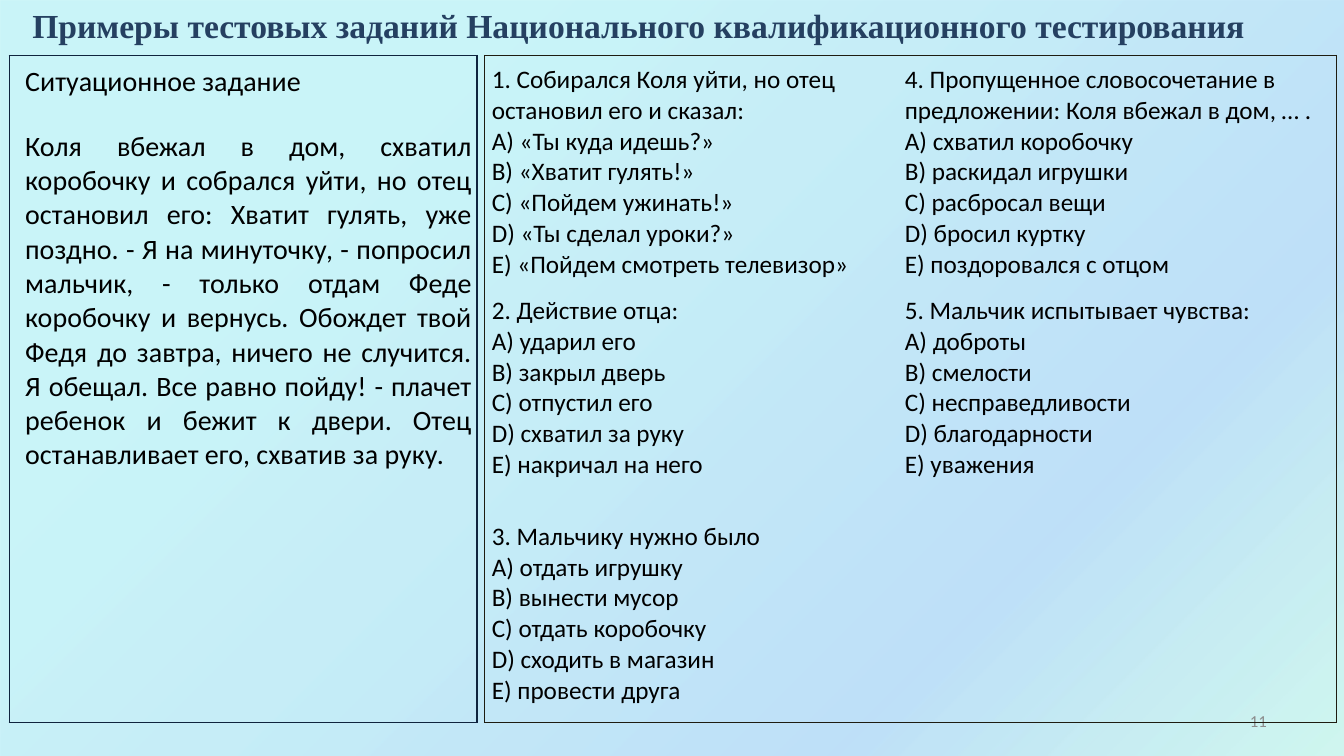
"""Build a slide with sample tasks of the national qualification test."""
from dataclasses import dataclass

from lxml.etree import SubElement
from pptx import Presentation
from pptx.dml.color import RGBColor
from pptx.enum.shapes import MSO_SHAPE
from pptx.enum.text import MSO_ANCHOR, MSO_AUTO_SIZE, PP_ALIGN
from pptx.oxml import parse_xml
from pptx.oxml.ns import nsdecls, qn
from pptx.util import Cm, Pt


@dataclass(frozen=True)
class Theme:
    """Colours, fonts and type sizes of the slide."""
    title_font: str = "Times New Roman"
    body_font: str = "Calibri"
    title_color: str = "254061"
    text_color: str = "000000"
    number_color: str = "8C8C8C"
    story_border: str = "0F243E"
    questions_border: str = "1E1C11"
    title_size: int = 24
    story_size: int = 20
    question_size: int = 18
    number_size: int = 12
    gradient: tuple = ((25, "21D6E0", 23), (75, "0087E6", 25),
                       (100, "03D4A8", 18), (100, "005CBF", 26))


theme = Theme()
NO_STYLE = "{2D5ABB26-0587-4C30-8999-92F81FD0307C}"


def add_run(paragraph, text, size, color=theme.text_color, font=theme.body_font, bold=False):
    """Append one formatted run to a paragraph."""
    run = paragraph.add_run()
    run.text = text
    run.font.size = Pt(size)
    run.font.name = font
    run.font.bold = bold
    run.font.color.rgb = RGBColor.from_string(color)


def add_plain_table(left, top, widths, heights):
    """Add a table without style, sized in centimetres, and return it."""
    frame = slide.shapes.add_table(len(heights), len(widths), Cm(left), Cm(top),
                                   Cm(sum(widths)), Cm(sum(heights)))
    table = frame.table
    table._tbl.tblPr.find(qn("a:tableStyleId")).text = NO_STYLE
    table.first_row = table.horz_banding = False
    for column, width in zip(table.columns, widths):
        column.width = Cm(width)
    for row, height in zip(table.rows, heights):
        row.height = Cm(height)
    for cell in table.iter_cells():
        cell.fill.background()
    return table


presentation = Presentation()
presentation.slide_width = Cm(33.87)
presentation.slide_height = Cm(19.05)
slide = presentation.slides.add_slide(presentation.slide_layouts[6])

backdrop = slide.shapes.add_shape(MSO_SHAPE.RECTANGLE, 0, 0, Cm(33.87), Cm(19.48))
backdrop.shadow.inherit = False
backdrop.line.fill.background()
stops = "".join(
    f'<a:gs pos="{position * 1000}"><a:srgbClr val="{color}">'
    f'<a:alpha val="{alpha * 1000}"/></a:srgbClr></a:gs>'
    for position, color, alpha in theme.gradient)
gradient = parse_xml(f'<a:gradFill {nsdecls("a")} rotWithShape="1"><a:gsLst>{stops}</a:gsLst>'
                     '<a:lin ang="2700000" scaled="0"/></a:gradFill>')
backdrop._element.spPr.find(qn("a:prstGeom")).addnext(gradient)

story = (
    "Коля вбежал в дом, схватил коробочку и собрался уйти, но отец остановил его: "
    "Хватит гулять, уже поздно. - Я на минуточку, - попросил мальчик, - только отдам Феде "
    "коробочку и вернусь. Обождет твой Федя до завтра, ничего не случится. Я обещал. "
    "Все равно пойду! - плачет ребенок и бежит к двери. Отец останавливает его, "
    "схватив за руку.")
questions = {
    (0, 1): ("1. Собирался Коля уйти, но отец остановил его и сказал:",
             "A) «Ты куда идешь?»", "B) «Хватит гулять!»", "C) «Пойдем ужинать!»",
             "D) «Ты сделал уроки?»", "E) «Пойдем смотреть телевизор»"),
    (1, 1): ("2. Действие отца:", "A) ударил его", "B) закрыл дверь", "C) отпустил его",
             "D) схватил за руку", "E) накричал на него"),
    (2, 1): ("3. Мальчику нужно было", "A) отдать игрушку", "B) вынести мусор",
             "C) отдать коробочку", "D) сходить в магазин", "E) провести друга"),
    (0, 2): ("4. Пропущенное словосочетание в предложении: Коля вбежал в дом, … .",
             "A) схватил коробочку", "B) раскидал игрушки", "C) расбросал вещи",
             "D) бросил куртку", "E) поздоровался с отцом"),
    (1, 2): ("5. Мальчик испытывает чувства:", "A) доброты", "B) смелости",
             "C) несправедливости", "D) благодарности", "E) уважения"),
}

tasks = add_plain_table(0.38, 1.5, (11.76, 10.41, 11.02), (5.82, 5.69, 5.31))
tasks.cell(0, 0).merge(tasks.cell(2, 0))
story_frame = tasks.cell(0, 0).text_frame
heading = story_frame.paragraphs[0]
heading.space_after = Pt(22)
add_run(heading, "Ситуационное задание", theme.story_size)
story_paragraph = story_frame.add_paragraph()
story_paragraph.alignment = PP_ALIGN.JUSTIFY
add_run(story_paragraph, story, theme.story_size)

for (row, column), lines in questions.items():
    text_frame = tasks.cell(row, column).text_frame
    for index, line in enumerate(lines):
        paragraph = text_frame.add_paragraph() if index else text_frame.paragraphs[0]
        add_run(paragraph, line, theme.question_size)

number_box = slide.shapes.add_textbox(Cm(24.28), Cm(17.65), Cm(7.9), Cm(1.02))
number_box.text_frame.word_wrap = True
number_box.text_frame.vertical_anchor = MSO_ANCHOR.MIDDLE
number = number_box.text_frame.paragraphs[0]
number.alignment = PP_ALIGN.RIGHT
add_run(number, "11", theme.number_size, theme.number_color)

for left, width, color in ((0.23, 11.79, theme.story_border),
                           (12.22, 21.46, theme.questions_border)):
    border_table = add_plain_table(left, 1.4, (width,), (16.8,))
    properties = border_table.cell(0, 0)._tc.get_or_add_tcPr()
    for index, side in enumerate(("lnL", "lnR", "lnT", "lnB")):
        border = SubElement(properties, qn(f"a:{side}"), w=str(Pt(1)))
        fill = SubElement(border, qn("a:solidFill"))
        SubElement(fill, qn("a:srgbClr"), val=color)
        properties.insert(index, border)

title_box = slide.shapes.add_textbox(0, 0, Cm(32.18), Cm(1.28))
title_box.text_frame.word_wrap = True
title_box.text_frame.auto_size = MSO_AUTO_SIZE.SHAPE_TO_FIT_TEXT
title = title_box.text_frame.paragraphs[0]
title.alignment = PP_ALIGN.CENTER
add_run(title, "Примеры тестовых заданий Национального квалификационного тестирования",
        theme.title_size, theme.title_color, theme.title_font, bold=True)

presentation.save("out.pptx")
